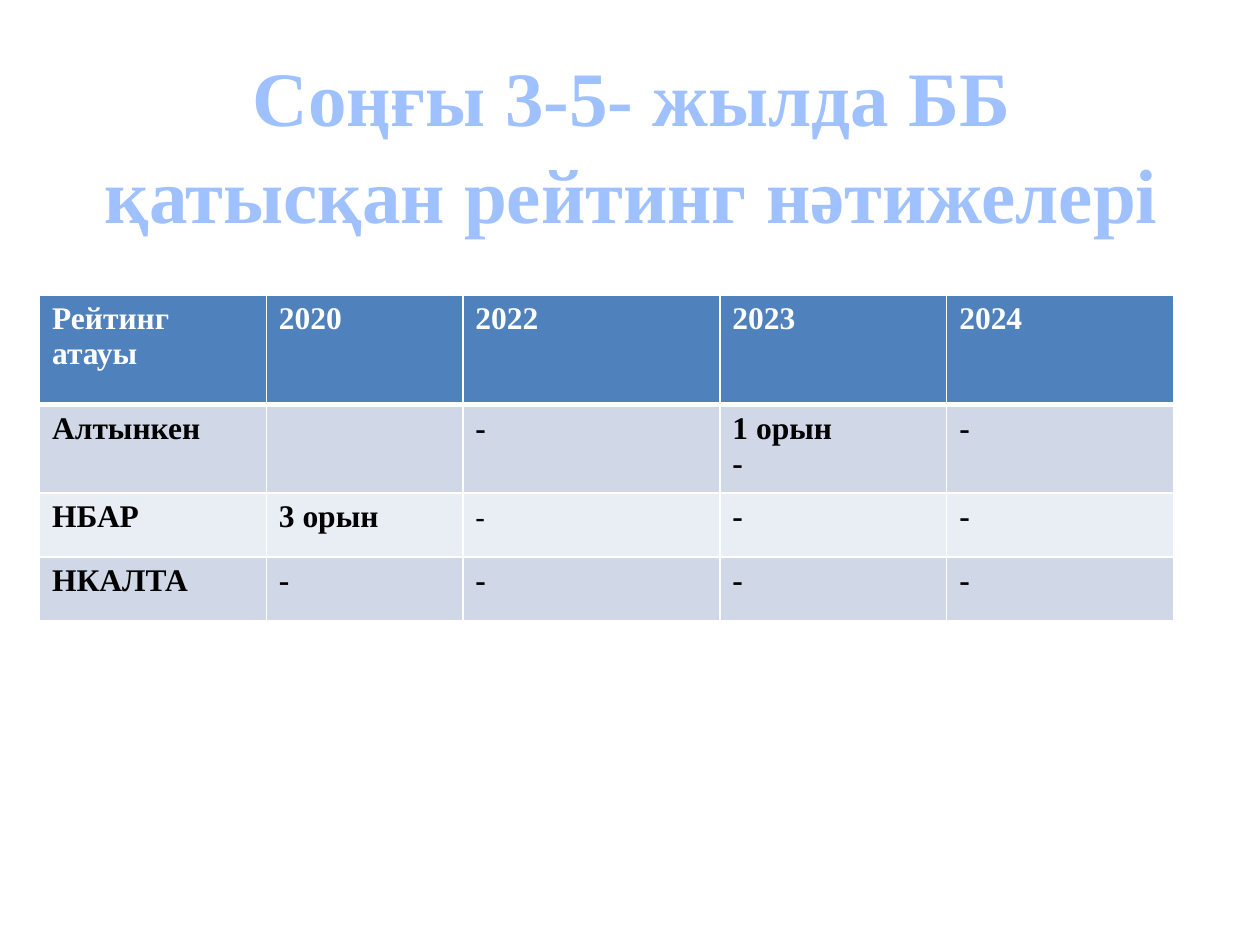
from typing import NamedTuple

from lxml.etree import SubElement
from pptx import Presentation
from pptx.dml.color import RGBColor
from pptx.enum.text import MSO_ANCHOR, PP_ALIGN
from pptx.oxml.ns import qn
from pptx.util import Pt

COLORS = {
    "white": "FFFFFF",
    "black": "000000",
    "header": "4F81BD",
    "band_dark": "D0D8E8",
    "band_light": "E9EDF4",
    "title_pale": "BFD3F9",
    "title_light": "A0C1FF",
    "title_deep": "003D85",
    "title_outline": "467AB8",
}
TITLE_STOPS = [(0, "title_pale"), (9, "title_light"), (50, "title_deep"),
               (79, "title_light"), (100, "title_pale")]
SERIF = {"name": "Times New Roman", "size": Pt(18), "bold": True}
PLAIN = {"name": "Calibri", "size": Pt(18), "bold": False}
COLUMN_WIDTHS = [129.6, 112.3, 146.9, 129.6, 129.6]


class RatingRow(NamedTuple):
    texts: list[str]
    height: float
    fill: str
    color: str = "black"
    bottom_line: float = 1
    top_line: float = 1
    plain_column: int = -1


RATING_ROWS = [
    RatingRow(["Рейтинг атауы", "2020", "2022", "2023", "2024"], 62.8, "header",
              color="white", bottom_line=3),
    RatingRow(["Алтынкен", "", "-", "1 орын\n-", "-"], 36.5, "band_dark", top_line=3),
    RatingRow(["НБАР", "3 орын", "-", "-", "-"], 36.5, "band_light", plain_column=2),
    RatingRow(["НКАЛТА", "-", "-", "-", "-"], 36.5, "band_dark"),
]


def set_font(font, style: dict) -> None:
    for attribute, value in style.items():
        setattr(font, attribute, value)


def add_solid_fill(parent, color: str) -> None:
    fill = SubElement(parent, qn("a:solidFill"))
    SubElement(fill, qn("a:srgbClr"), val=COLORS[color])


def add_title(slide, text: str) -> None:
    title = slide.shapes.add_textbox(Pt(36), Pt(21.6), Pt(650), Pt(113))
    frame = title.text_frame
    frame.word_wrap = True
    frame.vertical_anchor = MSO_ANCHOR.MIDDLE
    frame.margin_top = Pt(9)
    paragraph = frame.paragraphs[0]
    paragraph.alignment = PP_ALIGN.CENTER
    paragraph.line_spacing = 1.05
    run = paragraph.add_run()
    run.text = text
    set_font(run.font, SERIF | {"size": Pt(44)})

    # Outline and vertical gradient come before the typeface
    properties = run.font._element
    outline = SubElement(properties, qn("a:ln"), w=str(Pt(0.83)))
    add_solid_fill(outline, "title_outline")
    gradient = SubElement(properties, qn("a:gradFill"))
    stops = SubElement(gradient, qn("a:gsLst"))
    for position, color in TITLE_STOPS:
        stop = SubElement(stops, qn("a:gs"), pos=str(position * 1000))
        SubElement(stop, qn("a:srgbClr"), val=COLORS[color])
    SubElement(gradient, qn("a:lin"), ang="5400000", scaled="0")
    properties.insert(0, gradient)
    properties.insert(0, outline)


def set_borders(cell, top: float, bottom: float) -> None:
    properties = cell._tc.get_or_add_tcPr()
    widths = {"a:lnL": 1, "a:lnR": 1, "a:lnT": top, "a:lnB": bottom}
    for index, (side, width) in enumerate(widths.items()):
        line = SubElement(properties, qn(side), w=str(Pt(width)))
        add_solid_fill(line, "white")
        properties.insert(index, line)


def fill_cell(cell, text: str, style: dict, row: RatingRow) -> None:
    cell.fill.solid()
    cell.fill.fore_color.rgb = RGBColor.from_string(COLORS[row.fill])
    set_borders(cell, row.top_line, row.bottom_line)
    cell.text_frame.text = text
    for paragraph in cell.text_frame.paragraphs:
        for run in paragraph.runs:
            set_font(run.font, style)
            run.font.color.rgb = RGBColor.from_string(COLORS[row.color])


def add_rating_table(slide, rows: list[RatingRow]) -> None:
    ratings = slide.shapes.add_table(
        len(rows), len(COLUMN_WIDTHS), Pt(22.6), Pt(168.5),
        Pt(sum(COLUMN_WIDTHS)), Pt(sum(row.height for row in rows))).table
    for column, width in zip(ratings.columns, COLUMN_WIDTHS):
        column.width = Pt(width)
    for row_index, row in enumerate(rows):
        ratings.rows[row_index].height = Pt(row.height)
        for column_index, text in enumerate(row.texts):
            style = PLAIN if column_index == row.plain_column else SERIF
            fill_cell(ratings.cell(row_index, column_index), text, style, row)


def main() -> None:
    presentation = Presentation()
    presentation.slide_width, presentation.slide_height = Pt(720), Pt(540)
    slide = presentation.slides.add_slide(presentation.slide_layouts[6])
    add_title(slide, "Соңғы 3-5- жылда ББ қатысқан рейтинг нәтижелері")
    add_rating_table(slide, RATING_ROWS)
    presentation.save("out.pptx")


if __name__ == "__main__":
    main()
